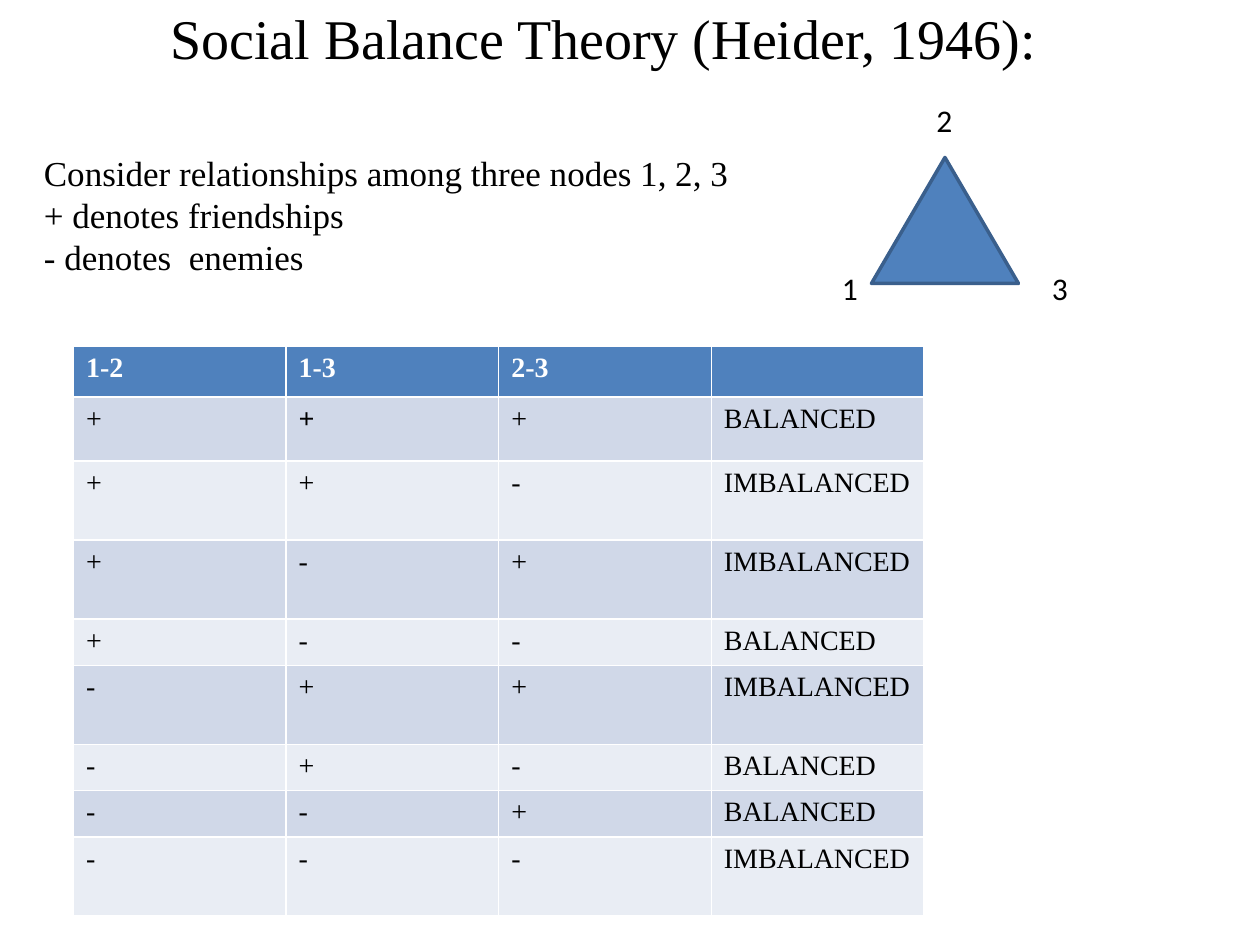
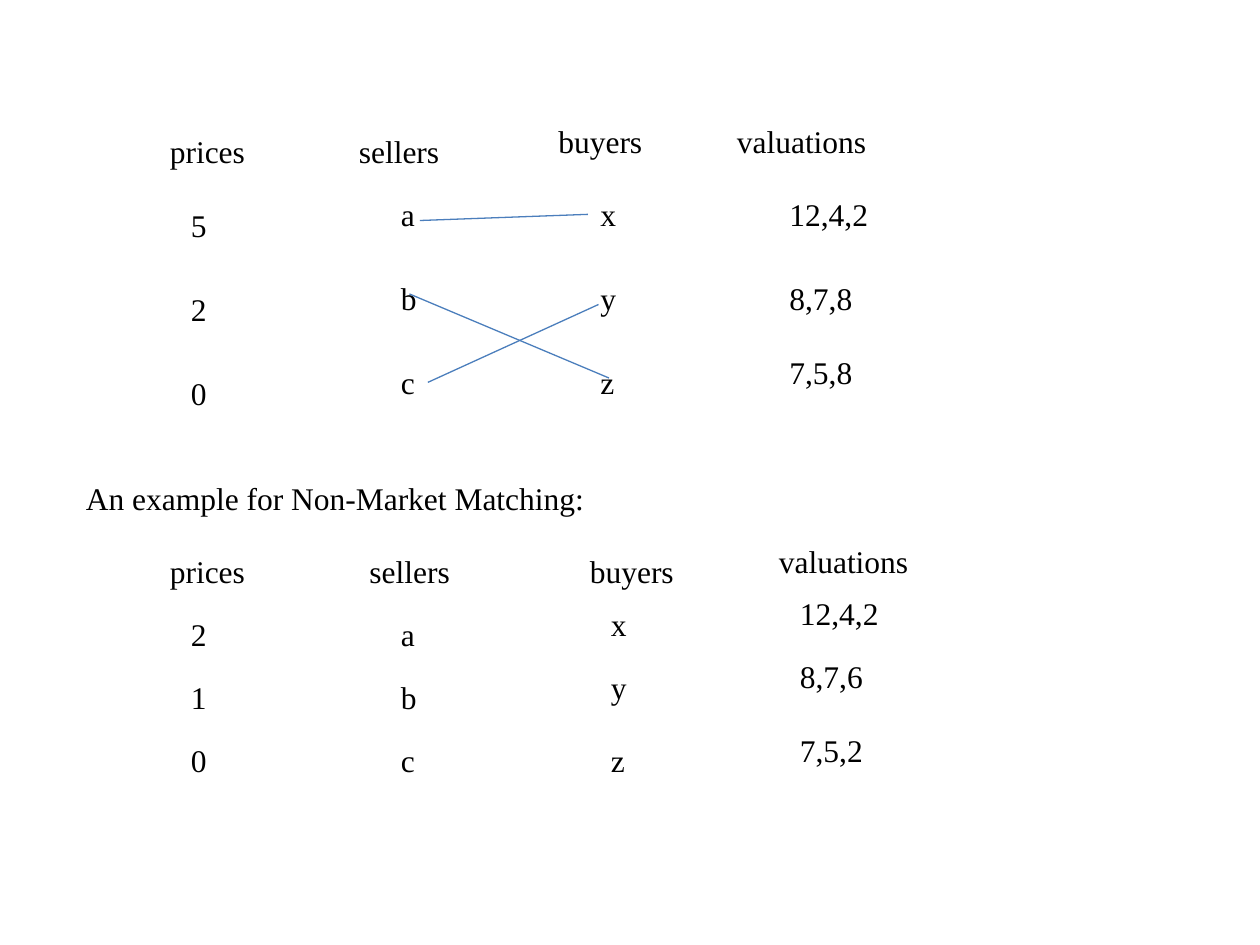
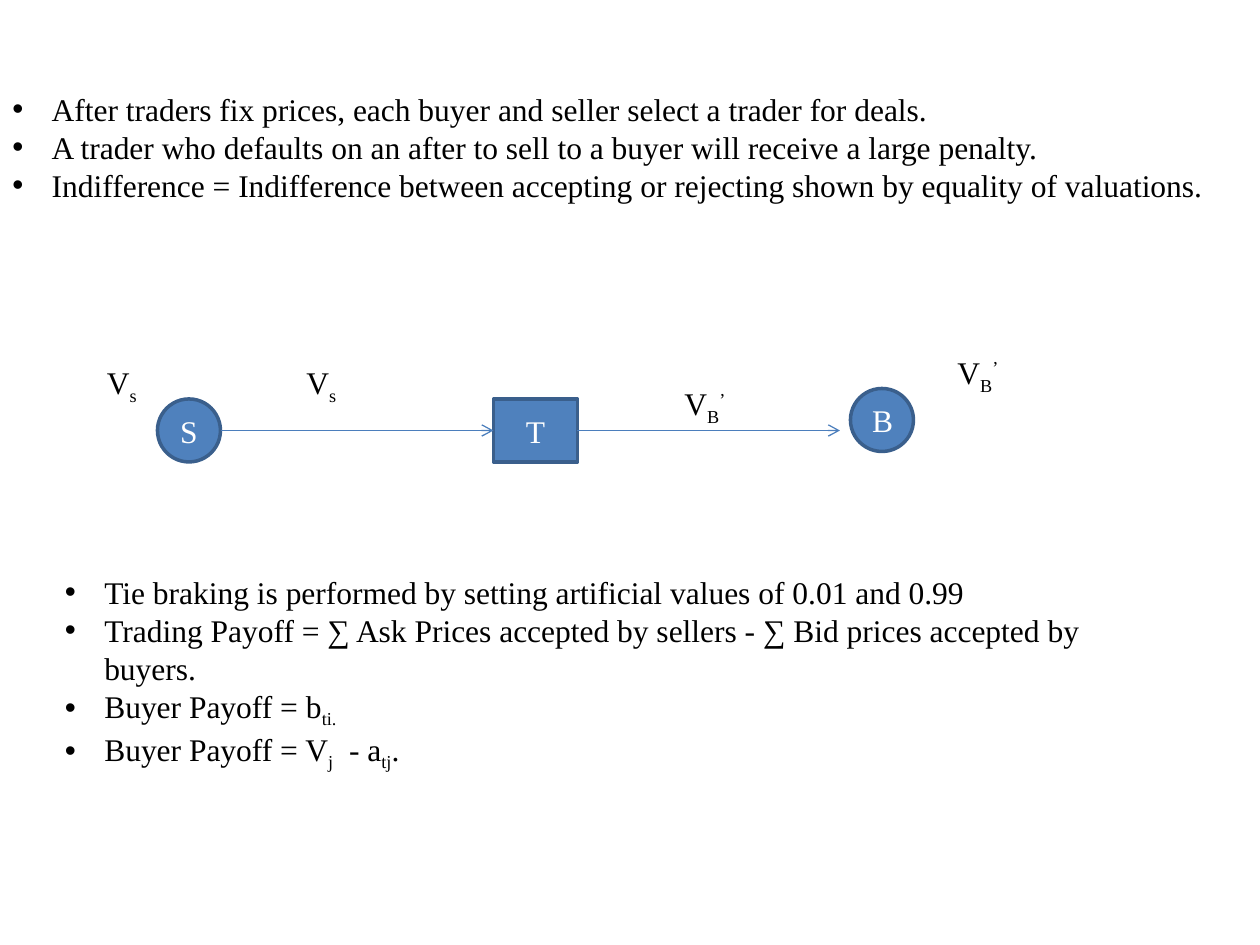
from lxml import etree
from pptx import Presentation
from pptx.dml.color import RGBColor
from pptx.enum.shapes import MSO_CONNECTOR, MSO_SHAPE
from pptx.enum.text import MSO_ANCHOR, MSO_AUTO_SIZE, PP_ALIGN
from pptx.oxml.ns import qn
from pptx.util import Pt

TRIANGLE = MSO_SHAPE.ISOSCELES_TRIANGLE
CIRCLE = MSO_SHAPE.FLOWCHART_CONNECTOR
RECTANGLE = MSO_SHAPE.RECTANGLE
STRAIGHT = MSO_CONNECTOR.STRAIGHT
LEFT, CENTER = PP_ALIGN.LEFT, PP_ALIGN.CENTER
TOP, MIDDLE = MSO_ANCHOR.TOP, MSO_ANCHOR.MIDDLE
FIT, FIXED = MSO_AUTO_SIZE.SHAPE_TO_FIT_TEXT, MSO_AUTO_SIZE.NONE

SERIF, SANS = "Times New Roman", "Calibri"
BLACK, WHITE = "000000", "FFFFFF"
BLUE, OUTLINE, LINE = "4F81BD", "3A5F8C", "4B7EBC"
BANDS = ["E9EDF4", "D0D8E8"]
BULLET_INDENT = 22.5
LINE_HEIGHT = 29

color = RGBColor.from_string


def write(frame, paragraphs, size=18, font=SERIF, ink=BLACK, bold=False,
          align=LEFT, bullets=False):
    """Fill a text frame; a paragraph is a string or a list of (text, baseline percent)."""
    for number, spans in enumerate(paragraphs):
        para = frame.paragraphs[0] if number == 0 else frame.add_paragraph()
        para.alignment = align
        if bullets:
            properties = para._p.get_or_add_pPr()
            properties.set("marL", str(Pt(BULLET_INDENT)))
            properties.set("indent", str(-Pt(BULLET_INDENT)))
            etree.SubElement(properties, qn("a:buFont"), typeface="Arial")
            etree.SubElement(properties, qn("a:buChar"), char="•")
        for text, baseline in [(spans, 0)] if isinstance(spans, str) else spans:
            span = para.add_run()
            span.text = text
            for name, value in {"size": Pt(size), "name": font, "bold": bold}.items():
                setattr(span.font, name, value)
            span.font.color.rgb = color(ink)
            if baseline:
                span._r.get_or_add_rPr().set("baseline", str(baseline * 1000))


def add_text(page, left, top, width, height, paragraphs, wrap=False, **style):
    box = page.shapes.add_textbox(Pt(left), Pt(top), Pt(width), Pt(height))
    box.text_frame.word_wrap = wrap
    box.text_frame.auto_size = FIXED if wrap else FIT
    write(box.text_frame, paragraphs, **style)


deck = Presentation()
deck.slide_width, deck.slide_height = Pt(720), Pt(540)
title_only, blank = deck.slide_layouts[5], deck.slide_layouts[6]
balance_page = deck.slides.add_slide(title_only)
matching_page = deck.slides.add_slide(blank)
trading_page = deck.slides.add_slide(blank)

# Social balance: title, node labels and table of signs
title = balance_page.shapes.title
for name, value in {"left": 90, "top": -1.5, "width": 514, "height": 46}.items():
    setattr(title, name, Pt(value))
for name, value in {"word_wrap": False, "auto_size": FIT, "vertical_anchor": TOP}.items():
    setattr(title.text_frame, name, value)
write(title.text_frame, ["Social Balance Theory (Heider, 1946):"], size=32)

add_text(balance_page, 18, 83, 426, 80, [
    "Consider relationships among three nodes 1, 2, 3",
    "+ denotes friendships",
    "- denotes  enemies",
], wrap=True, size=20)
for node, left, top, width in [("1", 474, 150, 42), ("2", 528, 54, 36), ("3", 594, 150, 30)]:
    add_text(balance_page, left, top, width, LINE_HEIGHT, [node], wrap=True, font=SANS)

sign_rows = [
    ("1-2", "1-3", "2-3", ""),
    ("+", "+", "+", "BALANCED"),
    ("+", "+", "-", "IMBALANCED"),
    ("+", "-", "+", "IMBALANCED"),
    ("+", "-", "-", "BALANCED"),
    ("-", "+", "+", "IMBALANCED"),
    ("-", "+", "-", "BALANCED"),
    ("-", "-", "+", "BALANCED"),
    ("-", "-", "-", "IMBALANCED"),
]
row_heights = [28, 36.5, 45.2, 45.2, 26.5, 45.2, 26.5, 26.5, 45.2]
table = balance_page.shapes.add_table(
    len(sign_rows), 4, Pt(42), Pt(198), Pt(486), Pt(sum(row_heights))).table
for row, (values, height) in enumerate(zip(sign_rows, row_heights)):
    table.rows[row].height = Pt(height)
    header = row == 0
    for column, value in enumerate(values):
        cell = table.cell(row, column)
        cell.fill.solid()
        cell.fill.fore_color.rgb = color(BLUE if header else BANDS[row % 2])
        write(cell.text_frame, [value], size=16, ink=WHITE if header else BLACK,
              bold=header or (row, column) == (1, 1))

# Matching: heading, left, top, width; then entries, left, tops, widths
matching_columns = [
    ("prices", 90, 72, 58, "5 2 0", 102, (114, 162, 210), (24, 24, 24)),
    ("sellers", 198, 72, 61, "a b c", 222, (108, 156, 204), (24, 24, 24)),
    ("buyers", 312, 66, 64, "x y z", 336, (108, 156, 204), (24, 24, 24)),
    ("valuations", 414, 66, 90, "12,4,2 8,7,8 7,5,8", 444, (108, 156, 198), (60, 51, 51)),
    ("prices", 90, 312, 58, "2 1 0", 102, (348, 384, 420), (24, 24, 24)),
    ("sellers", 204, 312, 61, "a b c", 222, (348, 384, 420), (24, 24, 24)),
    ("buyers", 330, 312, 64, "x y z", 342, (342, 378, 420), (24, 24, 24)),
    ("valuations", 438, 306, 90, "12,4,2 8,7,6 7,5,2", 450, (336, 372, 414), (60, 51, 51)),
]
for heading, left, top, width, entries, entry_left, tops, widths in matching_columns:
    add_text(matching_page, left, top, width, LINE_HEIGHT, [heading])
    for entry, entry_top, entry_width in zip(entries.split(), tops, widths):
        add_text(matching_page, entry_left, entry_top, entry_width, LINE_HEIGHT, [entry])
add_text(matching_page, 42, 270, 313, LINE_HEIGHT, ["An example for Non-Market Matching:"])

# Trading: rules, value labels and payoffs
add_text(trading_page, 0, 48, 739.5, 117, [
    "After traders fix prices, each buyer and seller select a trader for deals.",
    "A trader who defaults on an after to sell to a buyer will receive a large penalty.",
    "Indifference = Indifference between accepting or rejecting shown by equality of valuations.",
], wrap=True, bullets=True)
add_text(trading_page, 30, 324, 630, 117, [
    "Tie braking is performed by setting artificial values of 0.01 and 0.99",
    "Trading Payoff = ∑ Ask Prices accepted by sellers - ∑ Bid prices accepted by buyers.",
    [("Buyer Payoff = b", 0), ("ti.", -25)],
    [("Buyer Payoff = V", 0), ("j", -25), ("  - a", 0), ("tj", -25), (".", 0)],
], wrap=True, bullets=True)
seller_value = [("V", 0), ("s", -25)]
buyer_value = [("V", 0), ("B", -25), ("’", 30)]
for spans, left, top, width in [
    (seller_value, 54, 204, 32),
    (seller_value, 168, 204, 32),
    (buyer_value, 384, 216, 40),
    (buyer_value, 540, 198, 40),
]:
    add_text(trading_page, left, top, width, LINE_HEIGHT, [spans])

# Filled shapes: the triad and the trading chain
nodes = {}
for page, kind, left, top, width, height, label in [
    (balance_page, TRIANGLE, 498, 90, 84, 72, ""),
    (trading_page, CIRCLE, 90, 228, 36, 36, "S"),
    (trading_page, RECTANGLE, 282, 228, 48, 36, "T"),
    (trading_page, CIRCLE, 486, 222, 36, 36, "B"),
]:
    shape = page.shapes.add_shape(kind, Pt(left), Pt(top), Pt(width), Pt(height))
    shape.shadow.inherit = False
    shape.fill.solid()
    shape.fill.fore_color.rgb = color(BLUE)
    shape.line.color.rgb = color(OUTLINE)
    shape.line.width = Pt(2)
    if label:
        shape.text_frame.vertical_anchor = MIDDLE
        write(shape.text_frame, [label], ink=WHITE, align=CENTER)
        nodes[label] = shape

# Matching lines and trading arrows
connectors = []
for page, x1, y1, x2, y2 in [
    (matching_page, 240, 126, 336, 122.5),
    (matching_page, 234, 168, 348, 216),
    (matching_page, 244.5, 218.5, 342, 174),
    (trading_page, 126, 246, 282, 246),
    (trading_page, 330, 246, 480, 246),
]:
    connector = page.shapes.add_connector(STRAIGHT, Pt(x1), Pt(y1), Pt(x2), Pt(y2))
    connector.line.color.rgb = color(LINE)
    connector.line.width = Pt(0.75)
    if page is trading_page:
        etree.SubElement(connector.line._get_or_add_ln(), qn("a:tailEnd"), type="arrow")
    etree.SubElement(connector._element.spPr, qn("a:effectLst"))
    connectors.append(connector)
to_trader, from_trader = connectors[-2:]
to_trader.end_connect(nodes["T"], 1)
from_trader.begin_connect(nodes["T"], 3)

deck.save("out.pptx")
